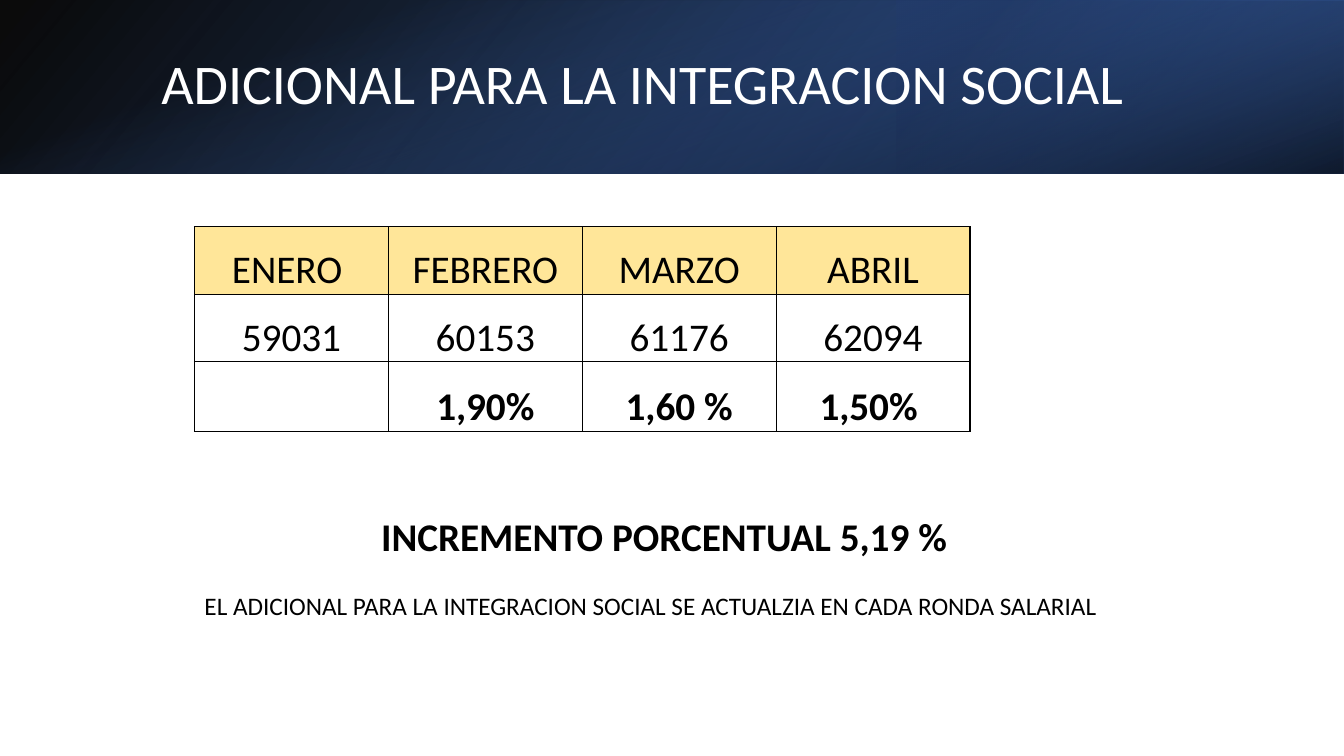
from lxml import etree
from pptx import Presentation
from pptx.dml.color import RGBColor
from pptx.enum.shapes import MSO_SHAPE
from pptx.enum.text import MSO_ANCHOR, MSO_AUTO_SIZE, PP_ALIGN
from pptx.oxml.ns import qn
from pptx.util import Inches, Pt

RECTANGLE = MSO_SHAPE.RECTANGLE
MIDDLE, BOTTOM = MSO_ANCHOR.MIDDLE, MSO_ANCHOR.BOTTOM
LEFT, CENTER = PP_ALIGN.LEFT, PP_ALIGN.CENTER
GROW = MSO_AUTO_SIZE.SHAPE_TO_FIT_TEXT

BLACK = RGBColor(0x00, 0x00, 0x00)
WHITE = RGBColor(0xFF, 0xFF, 0xFF)
BLUE = RGBColor(0x44, 0x72, 0xC4)
MID_BLUE = RGBColor(0x2F, 0x55, 0x97)
NAVY = RGBColor(0x20, 0x38, 0x64)
SAND = RGBColor(0xFF, 0xE6, 0x99)

FONT = "Calibri"
MONTHS = [
    ["ENERO ", "FEBRERO", "MARZO", "ABRIL"],
    ["59031", "60153", "61176", "62094"],
    ["", "1,90%", "1,60 %", "1,50% "],
]
ROW_HEIGHTS = [0.67, 0.67, 0.69]


def style(para, size, color=BLACK, bold=False, align=LEFT):
    para.alignment = align
    for span in para.runs:
        span.font.name = FONT
        span.font.size = Pt(size)
        span.font.bold = bold
        span.font.color.rgb = color


def add_band(page, bounds, stops, angle, rotation=0, flip=False):
    band = page.shapes.add_shape(RECTANGLE, *map(Inches, bounds))
    band.shadow.inherit = False
    band.line.fill.background()
    band.rotation = rotation
    properties = band._element.spPr
    if flip:
        properties.find(qn("a:xfrm")).set("flipH", "1")
    band.fill.gradient()
    band.fill.gradient_angle = 360 - angle
    for stop, (position, color, _) in zip(band.fill.gradient_stops, stops):
        stop.position = position
        stop.color.rgb = color
    tints = properties.iter(qn("a:srgbClr"))
    for tint, (_, _, opacity) in zip(tints, stops):
        etree.SubElement(tint, qn("a:alpha")).set("val", str(opacity * 1000))


def add_title(page, text):
    title = page.shapes.title
    page.shapes._spTree.append(title._element)
    title.left, title.top = Inches(1.5), Inches(0.38)
    title.width, title.height = Inches(10.98), Inches(0.96)
    frame = title.text_frame
    frame.text = text
    frame.vertical_anchor = MIDDLE
    para = frame.paragraphs[0]
    para.line_spacing = 0.9
    para.space_after = Pt(6)
    style(para, 40, WHITE)


def add_summary(page, headline, remark):
    box = page.shapes.add_textbox(Inches(1.93), Inches(5.03), Inches(9.4), Inches(1.18))
    frame = box.text_frame
    frame.word_wrap = True
    frame.auto_size = GROW
    frame.text = headline
    style(frame.paragraphs[0], 28, bold=True, align=CENTER)
    para = frame.add_paragraph()
    para.text = remark
    para.space_before = Pt(22)
    style(para, 18)


def set_borders(cell, widths):
    properties = cell._tc.get_or_add_tcPr()
    for index, (side, width) in enumerate(zip("LRTB", widths)):
        line = etree.Element(qn("a:ln" + side), w=str(Pt(width)))
        fill = etree.SubElement(line, qn("a:solidFill"))
        etree.SubElement(fill, qn("a:srgbClr")).set("val", str(BLACK))
        properties.insert(index, line)


def add_month_table(page):
    row_count, column_count = len(MONTHS), len(MONTHS[0])
    table = page.shapes.add_table(
        row_count, column_count, Inches(1.93), Inches(2.25), Inches(7.69), Inches(2.03)
    ).table
    table.first_row = False
    table.horz_banding = False
    for row, height in zip(table.rows, ROW_HEIGHTS):
        row.height = Inches(height)
    for r, texts in enumerate(MONTHS):
        for c, text in enumerate(texts):
            cell = table.cell(r, c)
            cell.text = text
            cell.vertical_anchor = BOTTOM
            cell.margin_left = cell.margin_right = cell.margin_top = Inches(0.01)
            cell.margin_bottom = 0
            style(cell.text_frame.paragraphs[0], 28, bold=r == 2, align=CENTER)
            if r == 0:
                cell.fill.solid()
                cell.fill.fore_color.rgb = SAND
            else:
                cell.fill.background()
            outer = (c == 0, c == column_count - 1, r == 0, r == row_count - 1)
            set_borders(cell, [1 if edge else 0.5 for edge in outer])


def main():
    deck = Presentation()
    deck.slide_width, deck.slide_height = Inches(13.33), Inches(7.5)
    page = deck.slides.add_slide(deck.slide_layouts[5])
    add_band(page, (0, 0, 13.33, 1.72),
             [(0, BLACK, 96), (1, MID_BLUE, 100)], 140, flip=True)
    add_band(page, (8.89, 0, 4.44, 1.72),
             [(0.19, NAVY, 68), (1, BLUE, 79)], 320, rotation=180, flip=True)
    add_band(page, (5.8, -5.8, 1.72, 13.33),
             [(0.23, BLUE, 0), (0.99, BLACK, 74)], 340, rotation=90)
    add_title(page, "ADICIONAL PARA LA INTEGRACION SOCIAL")
    add_summary(page, "INCREMENTO PORCENTUAL 5,19 % ",
                "EL ADICIONAL PARA LA INTEGRACION SOCIAL SE ACTUALZIA EN CADA RONDA SALARIAL")
    add_month_table(page)
    deck.save("out.pptx")


if __name__ == "__main__":
    main()
